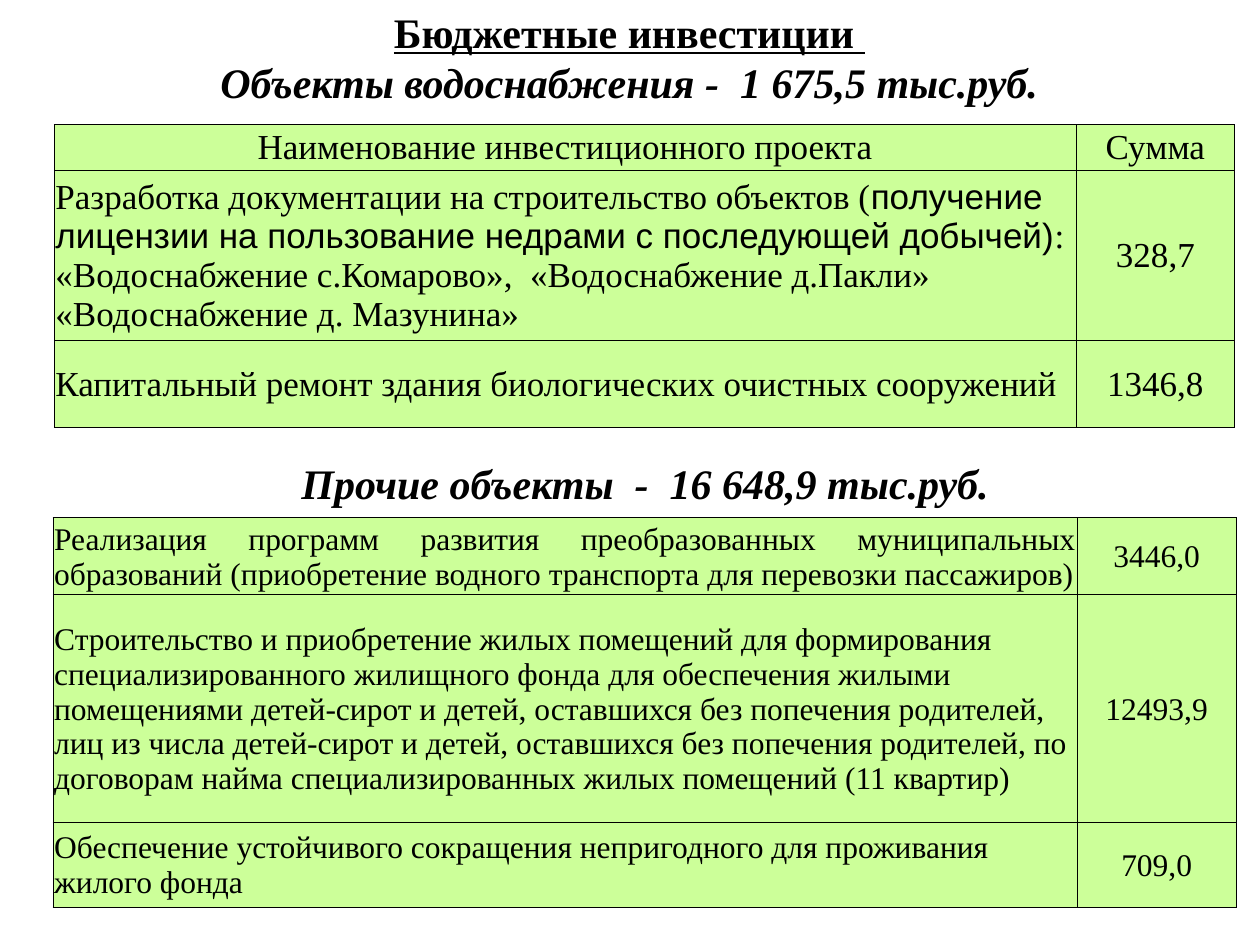
"""Build the budget investments slide with two headings and two tables."""
from dataclasses import dataclass

from lxml import etree
from pptx import Presentation
from pptx.dml.color import RGBColor
from pptx.enum.text import MSO_ANCHOR, PP_ALIGN
from pptx.oxml.ns import qn
from pptx.util import Inches, Pt


@dataclass(frozen=True)
class Theme:
    serif: str = "Times New Roman"
    sans: str = "Arial"
    ink: str = "000000"
    cell: str = "CCFF99"
    heading: int = 24
    water: int = 20
    other: int = 18
    border: float = 0.5


theme = Theme()
LEFT, CENTER, JUSTIFY = PP_ALIGN.LEFT, PP_ALIGN.CENTER, PP_ALIGN.JUSTIFY


def write(tf, paragraphs, size, align, **style):
    for i, runs in enumerate(paragraphs):
        p = tf.paragraphs[0] if i == 0 else tf.add_paragraph()
        p.alignment = align
        for text, extra in runs:
            r = p.add_run()
            r.text = text
            r.font.color.rgb = RGBColor.from_string(theme.ink)
            values = {"name": theme.serif, "size": Pt(size), **style, **extra}
            for key, value in values.items():
                setattr(r.font, key, value)


def style_cell(cell):
    margins = {"margin_left": 0.01, "margin_right": 0.01, "margin_top": 0.01, "margin_bottom": 0}
    for key, value in margins.items():
        setattr(cell, key, Inches(value))
    cell.vertical_anchor = MSO_ANCHOR.MIDDLE
    tc_pr = cell._tc.get_or_add_tcPr()
    for side in ("a:lnL", "a:lnR", "a:lnT", "a:lnB"):
        ln = etree.SubElement(tc_pr, qn(side), w=str(Pt(theme.border)))
        fill = etree.SubElement(ln, qn("a:solidFill"))
        etree.SubElement(fill, qn("a:srgbClr"), val=theme.ink)
    cell.fill.solid()
    cell.fill.fore_color.rgb = RGBColor.from_string(theme.cell)


headings = [
    ((0.98, 0, 8.03, 1.31), [
        [("Бюджетные инвестиции ", {"underline": True})],
        [("Объекты водоснабжения -  1 675,5 тыс.руб.", {"italic": True})],
    ]),
    ((1.46, 3.58, 7.32, 0.5), [
        [("Прочие объекты  -  16 648,9 тыс.руб.", {"italic": True})],
    ]),
]

water_rows = [
    (0.36, CENTER, [[("Наименование инвестиционного проекта", {})]], "Сумма"),
    (1.35, LEFT, [
        [
            ("Разработка документации на строительство объектов (", {}),
            ("получение лицензии на пользование недрами с последующей добычей)",
             {"name": theme.sans}),
            (":", {}),
        ],
        [("«Водоснабжение с.Комарово»,  «Водоснабжение д.Пакли»", {})],
        [("«Водоснабжение д. Мазунина»", {})],
    ], "328,7"),
    (0.69, LEFT, [[("Капитальный ремонт здания биологических очистных сооружений", {})]],
     "1346,8"),
]

other_rows = [
    (0.61, JUSTIFY, [[(
        "Реализация программ развития преобразованных муниципальных образований "
        "(приобретение водного транспорта для перевозки пассажиров)", {})]], "3446,0"),
    (1.81, LEFT, [[(
        "Строительство и приобретение жилых помещений для формирования "
        "специализированного жилищного фонда для обеспечения жилыми помещениями "
        "детей-сирот и детей, оставшихся без попечения родителей, лиц из числа "
        "детей-сирот и детей, оставшихся без попечения родителей, по договорам найма "
        "специализированных жилых помещений (11 квартир)", {})]], "12493,9"),
    (0.67, LEFT, [[(
        "Обеспечение устойчивого сокращения непригодного для проживания жилого фонда",
        {})]], "709,0"),
]

tables = [
    (0.43, 0.99, (8.11, 1.26), theme.water, water_rows),
    (0.42, 4.11, (8.13, 1.26), theme.other, other_rows),
]

prs = Presentation()
prs.slide_width, prs.slide_height = Inches(10), Inches(7.5)
s = prs.slides.add_slide(prs.slide_layouts[6])

for box, paragraphs in headings:
    tf = s.shapes.add_textbox(*map(Inches, box)).text_frame
    tf.word_wrap = True
    write(tf, paragraphs, theme.heading, CENTER, bold=True)

for left, top, widths, size, rows in tables:
    height = sum(row[0] for row in rows)
    box = map(Inches, (left, top, sum(widths), height))
    table = s.shapes.add_table(len(rows), len(widths), *box).table
    table.first_row = table.horz_banding = False
    for column, width in zip(table.columns, widths):
        column.width = Inches(width)
    for row, (row_height, align, project, amount) in zip(table.rows, rows):
        row.height = Inches(row_height)
        contents = [(project, align), ([[(amount, {})]], CENTER)]
        for cell, (paragraphs, cell_align) in zip(row.cells, contents):
            style_cell(cell)
            write(cell.text_frame, paragraphs, size, cell_align)

prs.save("out.pptx")
